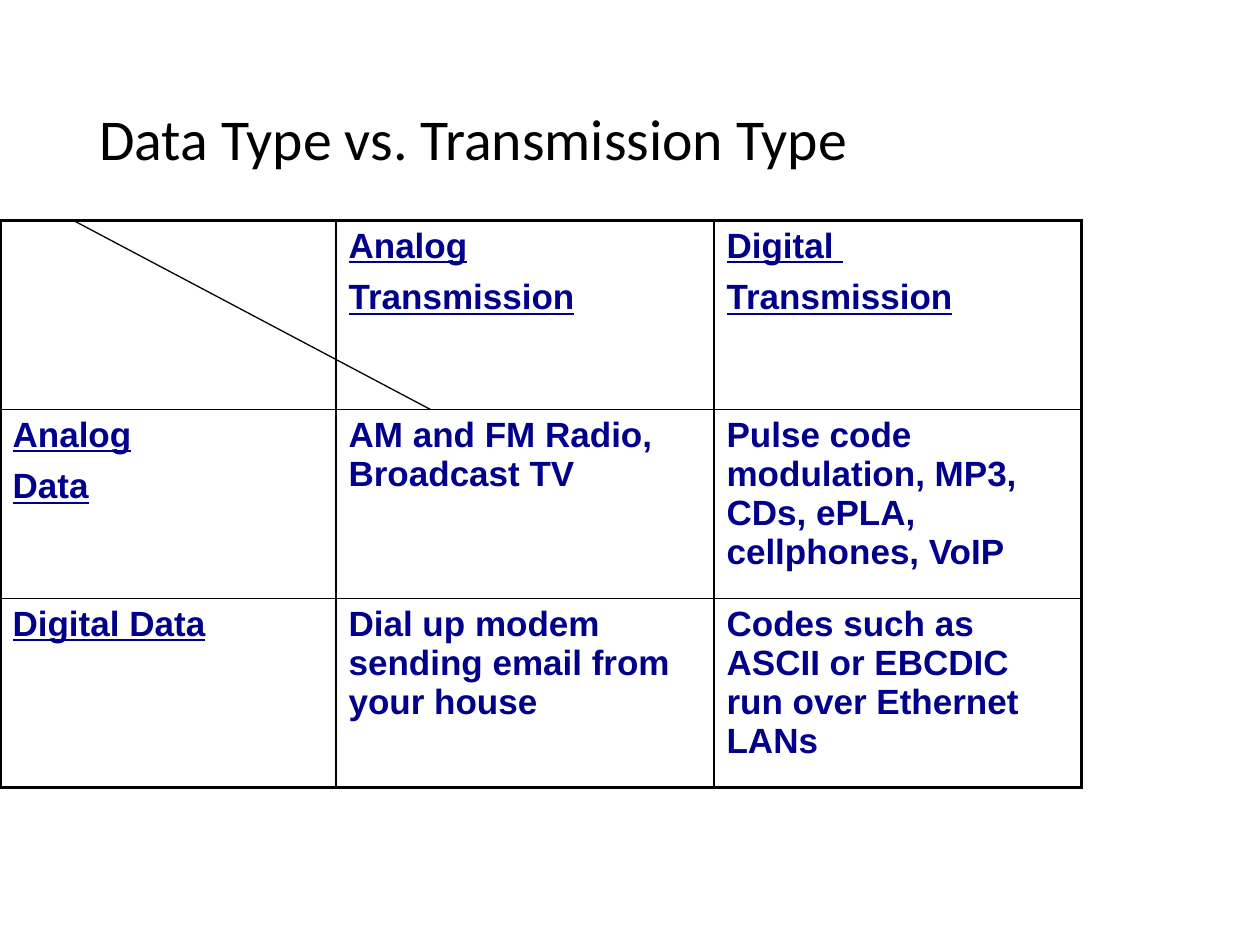
from lxml import etree
from pptx import Presentation
from pptx import util as u
from pptx.dml import color
from pptx.enum import shapes, text
from pptx.oxml import ns

Pt = u.Pt


def paint(target, hex_code):
    target.rgb = color.RGBColor.from_string(hex_code)


def add_border(cell, position, side, width):
    line = etree.Element(ns.qn("a:ln" + side), w=str(Pt(width)))
    fill = etree.SubElement(line, ns.qn("a:solidFill"))
    etree.SubElement(fill, ns.qn("a:srgbClr"), val="000000")
    cell._tc.get_or_add_tcPr().insert(position, line)


deck = Presentation()
deck.slide_width, deck.slide_height = Pt(720), Pt(540)
slide = deck.slides.add_slide(deck.slide_layouts[5])

title = slide.shapes.title
title.left, title.top, title.width, title.height = Pt(49.5), Pt(28.75), Pt(621), Pt(104.4)
title.text_frame.text = "Data Type vs. Transmission Type"
title.text_frame.vertical_anchor = text.MSO_ANCHOR.MIDDLE
heading = title.text_frame.paragraphs[0]
heading.alignment = text.PP_ALIGN.LEFT
heading.line_spacing = 0.9
heading.font.name, heading.font.size = "Calibri", Pt(33)
paint(heading.font.color, "000000")

rows = [
    ["", "Analog\nTransmission", "Digital \nTransmission"],
    ["Analog\nData", "AM and FM Radio, Broadcast TV",
     "Pulse code modulation, MP3, CDs, ePLA, cellphones, VoIP"],
    ["Digital Data", "Dial up modem sending email from your house",
     "Codes such as ASCII or EBCDIC run over Ethernet LANs"],
]
column_widths = [192, 216, 210]
row_height = 108
table_top = 126
last = len(rows) - 1

matrix = slide.shapes.add_table(
    len(rows), len(column_widths), 0, Pt(table_top),
    Pt(sum(column_widths)), Pt(row_height * len(rows))).table
matrix.first_row = matrix.horz_banding = False
for column, width in zip(matrix.columns, column_widths):
    column.width = Pt(width)

for r, row in enumerate(rows):
    matrix.rows[r].height = Pt(row_height)
    for c, wording in enumerate(row):
        cell = matrix.cell(r, c)
        cell.text = wording
        cell.fill.background()
        for paragraph in cell.text_frame.paragraphs:
            paragraph.space_before, paragraph.space_after = Pt(4), Pt(3)
            paragraph.font.name, paragraph.font.size = "Arial", Pt(20)
            paragraph.font.bold = True
            paragraph.font.underline = r == 0 or c == 0
            paint(paragraph.font.color, "00008C")
        outer_edges = {"L": c == 0, "R": c == last, "T": r == 0, "B": r == last}
        for position, (side, outer) in enumerate(outer_edges.items()):
            add_border(cell, position, side, 2.25 if outer else 1)

diagonal = slide.shapes.add_connector(
    shapes.MSO_CONNECTOR.STRAIGHT,
    Pt(246), Pt(table_top + row_height), Pt(42), Pt(table_top))
diagonal.line.width = Pt(0.75)
paint(diagonal.line.color, "000000")
etree.SubElement(diagonal._element.spPr, ns.qn("a:effectLst"))

deck.save("out.pptx")
